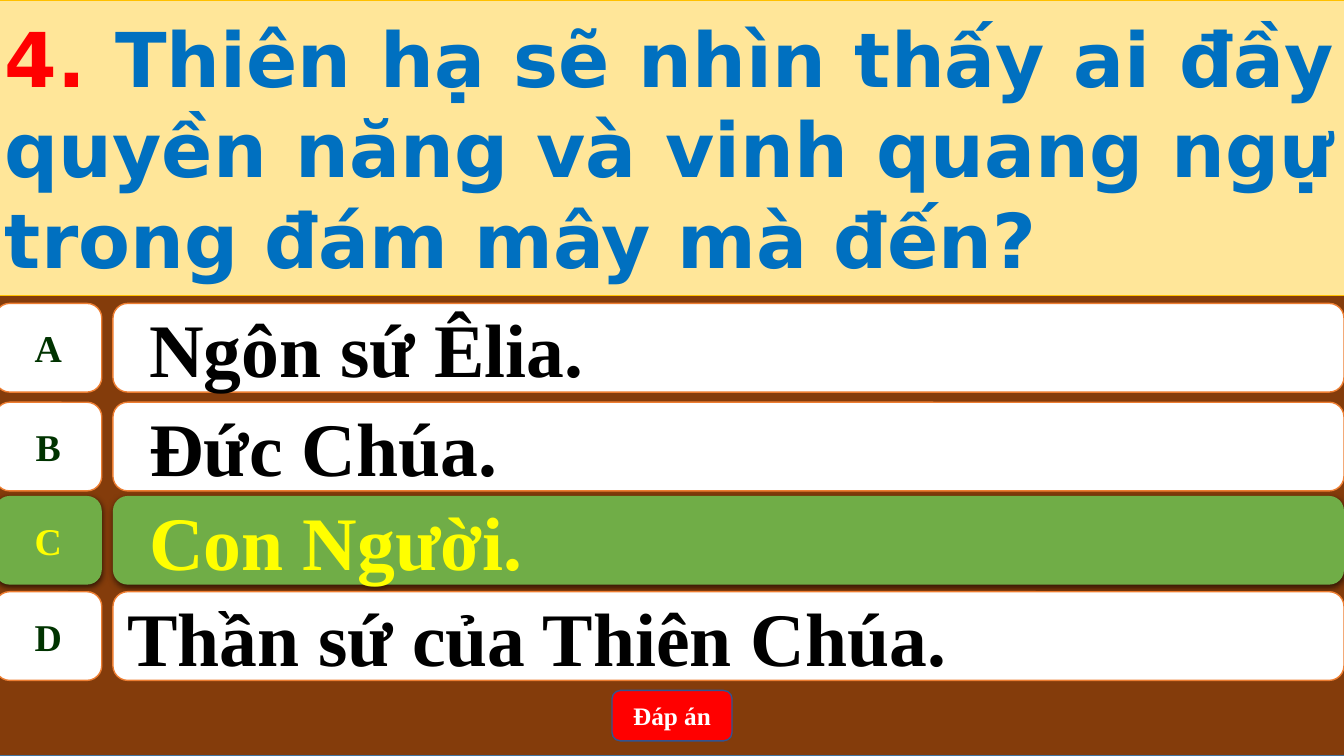
from lxml.etree import SubElement
from pptx import Presentation
from pptx.dml.color import RGBColor
from pptx.enum.shapes import MSO_SHAPE as Shape
from pptx.enum.text import MSO_ANCHOR as Anchor, PP_ALIGN as Align
from pptx.oxml.ns import qn
from pptx.util import Inches, Pt

BROWN = RGBColor(0x84, 0x3C, 0x0B)
STEEL = RGBColor(0x43, 0x73, 0x9E)
CREAM = RGBColor(0xFF, 0xE6, 0x99)
GOLD = RGBColor(0xFF, 0xC0, 0x00)
ORANGE = RGBColor(0xED, 0x7D, 0x31)
GREEN = RGBColor(0x70, 0xAD, 0x47)
DARK_GREEN = RGBColor(0x00, 0x33, 0x00)
YELLOW = RGBColor(0xFF, 0xFF, 0x00)
RED = RGBColor(0xFF, 0x00, 0x00)
BLUE = RGBColor(0x00, 0x70, 0xC0)
NAVY = RGBColor(0x32, 0x54, 0x91)
WHITE = RGBColor(0xFF, 0xFF, 0xFF)
BLACK = RGBColor(0x00, 0x00, 0x00)

COLUMNS, ROWS = 133.3, 75
LEFT_EDGE, FULL_WIDTH = -0.5, 133.9
LABEL_WIDTH, ANSWER_LEFT, ANSWER_WIDTH = 10.6, 11.2, 122.1
ANSWER_HEIGHT = 8.8

# letter, top row, answer, indented, correct
ANSWERS = [
    ("A", 30.1, "Ngôn sứ Êlia.", True, False),
    ("B", 39.9, "Đức Chúa.", True, False),
    ("C", 49.2, "Con Người.", True, True),
    ("D", 58.7, "Thần sứ của Thiên Chúa.", False, False),
]


class QuizSlide:
    serif, sans = "Times New Roman", "DejaVu Sans"
    large, medium, small = Pt(54), Pt(27), Pt(18)

    def __init__(self, deck):
        self.slide = deck.slides.add_slide(deck.slide_layouts[6])
        self.column = deck.slide_width / COLUMNS
        self.row = deck.slide_height / ROWS

    def panel(self, kind, left, top, width, height, fill, line=None, weight=1):
        panel = self.slide.shapes.add_shape(
            kind, round(left * self.column), round(top * self.row),
            round(width * self.column), round(height * self.row))
        panel.shadow.inherit = False
        panel.fill.solid()
        panel.fill.fore_color.rgb = fill
        if line is None:
            panel.line.fill.background()
        else:
            panel.line.color.rgb = line
            panel.line.width = Pt(weight)
        return panel

    def caption(self, panel, runs, size, font, align=Align.LEFT, wrap=True):
        """Fill the panel with one bold paragraph of (text, colour) runs."""
        frame = panel.text_frame
        frame.word_wrap = wrap
        frame.vertical_anchor = Anchor.MIDDLE
        paragraph = frame.paragraphs[0]
        paragraph.alignment = align
        paragraph.font.name = font
        paragraph.font.size = size
        paragraph.font.bold = True
        for text, colour in runs:
            run = paragraph.add_run()
            run.text = text
            run.font.color.rgb = colour
        return paragraph

    def cast_shadow(self, panel):
        effects = panel._element.spPr.find(qn("a:effectLst"))
        shadow = SubElement(effects, qn("a:outerShdw"), blurRad=str(Pt(4.5)),
                            dist=str(Pt(1.5)), dir="5400000", rotWithShape="0")
        colour = SubElement(shadow, qn("a:srgbClr"), val=str(BLACK))
        SubElement(colour, qn("a:alpha"), val="63000")

    def question(self, number, text):
        banner = self.panel(Shape.RECTANGLE, LEFT_EDGE, 0, FULL_WIDTH, 29.3,
                            CREAM, GOLD, 0.5)
        self.caption(banner, [(number, RED), (text, BLUE)], self.large,
                     self.sans, Align.JUSTIFY)

    def answer(self, letter, top, text, indented, correct):
        fill, line = (GREEN, None) if correct else (WHITE, ORANGE)
        letter_colour, text_colour = (
            (YELLOW, YELLOW) if correct else (DARK_GREEN, BLACK))
        bar = self.panel(Shape.ROUNDED_RECTANGLE, ANSWER_LEFT, top,
                         ANSWER_WIDTH, ANSWER_HEIGHT, fill, line)
        label = self.panel(Shape.FLOWCHART_ALTERNATE_PROCESS, LEFT_EDGE, top,
                           LABEL_WIDTH, ANSWER_HEIGHT, fill, line)
        paragraph = self.caption(bar, [(text, text_colour)], self.large,
                                 self.serif)
        if indented:
            paragraph.level = 1
            properties = paragraph._p.get_or_add_pPr()
            properties.set("marL", str(Inches(0.5)))
            properties.set("indent", str(Inches(-0.28)))
        self.caption(label, [(letter, letter_colour)], self.medium, self.serif,
                     Align.CENTER, wrap=False)
        if correct:
            self.cast_shadow(bar)
            self.cast_shadow(label)

    def button(self, text):
        button = self.panel(Shape.ROUNDED_RECTANGLE, 60.7, 68.5, 11.9, 5,
                            RED, NAVY)
        self.caption(button, [(text, WHITE)], self.small, self.serif,
                     Align.CENTER)


def main():
    deck = Presentation()
    deck.slide_width, deck.slide_height = Inches(13.33), Inches(7.5)
    quiz = QuizSlide(deck)
    quiz.panel(Shape.RECTANGLE, LEFT_EDGE, 0, FULL_WIDTH, ROWS, BROWN, STEEL)
    quiz.question("4. ", "Thiên hạ sẽ nhìn thấy ai đầy quyền năng và vinh "
                  "quang ngự trong đám mây mà đến?")
    for answer in ANSWERS:
        quiz.answer(*answer)
    quiz.button("Đáp án")
    deck.save("out.pptx")


if __name__ == "__main__":
    main()
